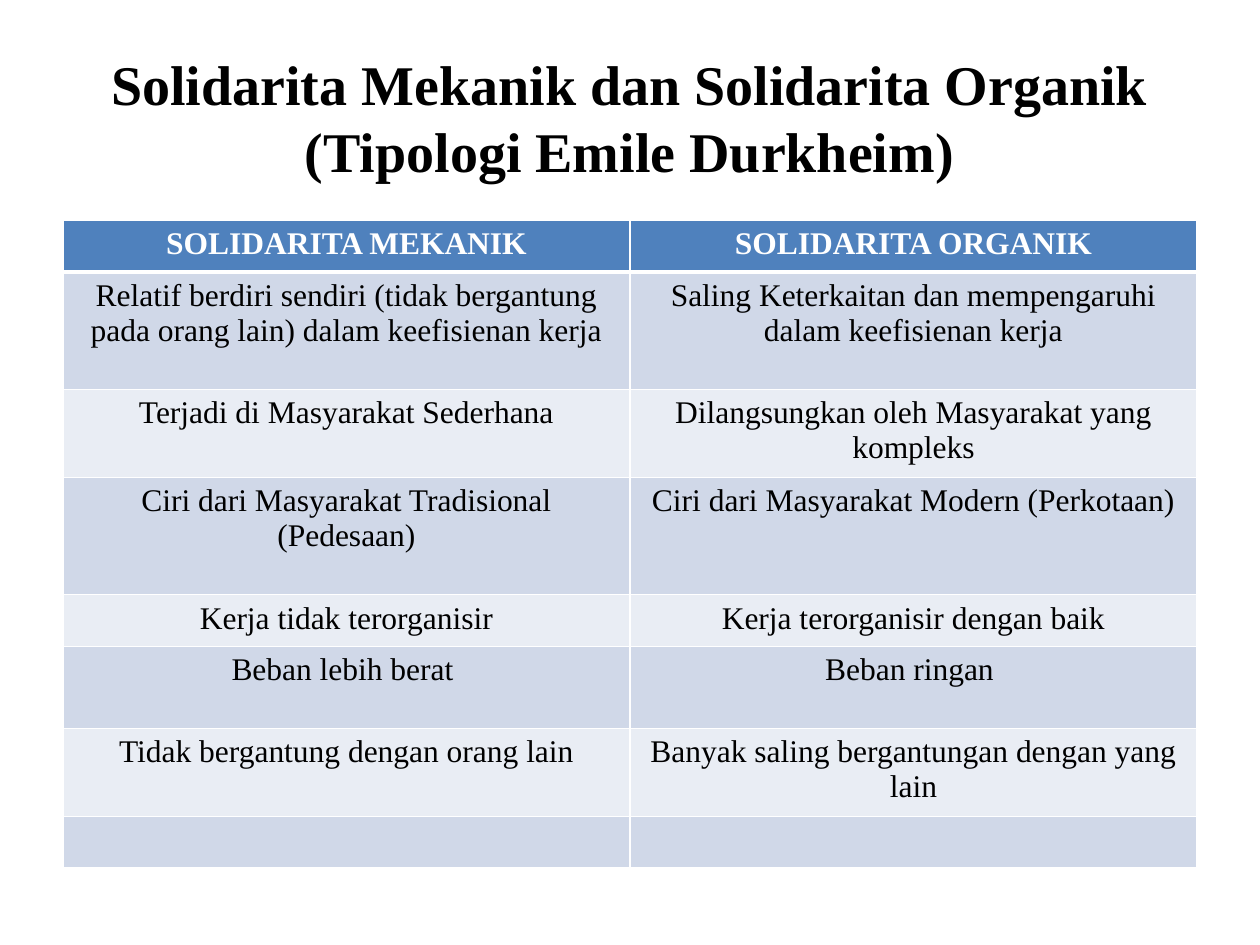
from lxml import etree
from pptx import Presentation
from pptx.dml.color import RGBColor
from pptx.enum.text import MSO_ANCHOR, PP_ALIGN
from pptx.oxml.ns import qn
from pptx.util import Inches, Pt

CENTER = PP_ALIGN.CENTER
MIDDLE = MSO_ANCHOR.MIDDLE
FONT = "Times New Roman"
COLORS = {"head": "4F81BD", "odd": "D0D8E8", "even": "E9EDF4",
          "white": "FFFFFF", "black": "000000"}
TITLE = "Solidarita Mekanik dan Solidarita Organik (Tipologi Emile Durkheim)"
ROWS = [
    (0.41, "SOLIDARITA MEKANIK", "SOLIDARITA ORGANIK"),
    (0.93, "Relatif berdiri sendiri (tidak bergantung pada orang lain) dalam keefisienan kerja",
     "Saling Keterkaitan dan mempengaruhi dalam keefisienan kerja"),
    (0.65, "Terjadi di Masyarakat Sederhana", "Dilangsungkan oleh Masyarakat yang kompleks"),
    (0.93, "Ciri dari Masyarakat Tradisional (Pedesaan)",
     "Ciri dari Masyarakat Modern (Perkotaan)"),
    (0.41, "Kerja tidak terorganisir", "Kerja terorganisir dengan baik"),
    (0.65, "Beban lebih berat ", "Beban ringan "),
    (0.65, "Tidak bergantung dengan orang lain", "Banyak saling bergantungan dengan yang lain"),
    (0.41, "", ""),
]


def write(frame, text, size, color, bold):
    """Write one centred run into a text frame."""
    para = frame.paragraphs[0]
    para.alignment = CENTER
    para.font.size = Pt(size)
    if text:
        run = para.add_run()
        run.text = text
        font = run.font
        font.name, font.size, font.bold = FONT, Pt(size), bold
        font.color.rgb = RGBColor.from_string(COLORS[color])


def edge(cell, widths):
    """Draw white cell borders in left, right, top, bottom order."""
    props = cell._tc.get_or_add_tcPr()
    for spot, (side, width) in enumerate(zip("LRTB", widths)):
        line = etree.Element(qn(f"a:ln{side}"), w=str(Pt(width)))
        fill = etree.SubElement(line, qn("a:solidFill"))
        etree.SubElement(fill, qn("a:srgbClr"), val=COLORS["white"])
        props.insert(spot, line)


def add_title(slide, left, top, width, height):
    """Place the slide title in the given box."""
    frame = slide.shapes.add_textbox(left, top, width, height).text_frame
    frame.word_wrap = True
    frame.vertical_anchor = MIDDLE
    write(frame, TITLE, 32, "black", True)


def add_grid(slide, left, top, width):
    """Place the comparison table at the given spot and width."""
    height = Inches(sum(row[0] for row in ROWS))
    table = slide.shapes.add_table(len(ROWS), 2, left, top, width, height).table
    for num, (tall, *texts) in enumerate(ROWS):
        table.rows[num].height = Inches(tall)
        head = num == 0
        shade = "head" if head else "odd" if num % 2 else "even"
        for col, text in enumerate(texts):
            cell = table.cell(num, col)
            cell.fill.solid()
            cell.fill.fore_color.rgb = RGBColor.from_string(COLORS[shade])
            edge(cell, (1, 1, 3 if num == 1 else 1, 3 if head else 1))
            write(cell.text_frame, text, 18, "white" if head else "black", head)


def main():
    """Build and save the slide."""
    deck = Presentation()
    deck.slide_width, deck.slide_height = Inches(10), Inches(7.5)
    slide = deck.slides.add_slide(deck.slide_layouts[6])
    add_title(slide, Inches(0.5), Inches(0.3), Inches(9), Inches(1.25))
    add_grid(slide, Inches(0.5), Inches(1.75), Inches(9))
    deck.save("out.pptx")


if __name__ == "__main__":
    main()
